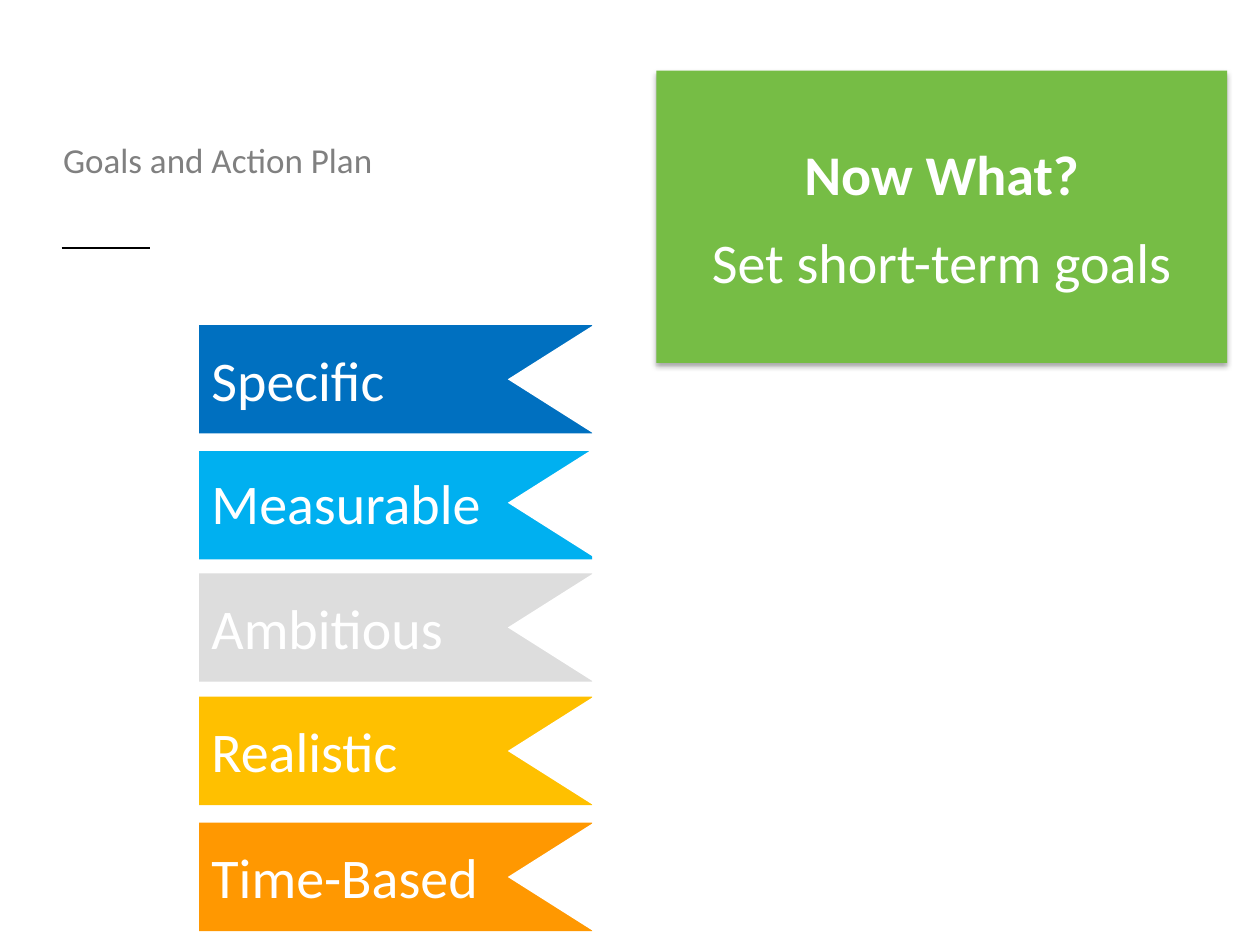
from lxml import etree
from pptx import Presentation
from pptx.dml.color import RGBColor
from pptx.enum.shapes import MSO_CONNECTOR, MSO_SHAPE
from pptx.enum.text import MSO_ANCHOR, PP_ALIGN
from pptx.oxml import parse_xml
from pptx.oxml.ns import nsdecls, qn
from pptx.util import Inches, Pt

RECTANGLE = MSO_SHAPE.RECTANGLE
TRIANGLE = MSO_SHAPE.ISOSCELES_TRIANGLE
STRAIGHT = MSO_CONNECTOR.STRAIGHT
TOP, MIDDLE = MSO_ANCHOR.TOP, MSO_ANCHOR.MIDDLE
LEFT, CENTER = PP_ALIGN.LEFT, PP_ALIGN.CENTER

COLORS = {
    "white": "FFFFFF", "black": "000000", "gray": "808080", "green": "76BD45",
    "blue": "0070C0", "sky": "00B0F0", "silver": "DDDDDD",
    "gold": "FFC000", "orange": "FF9801",
}
BAR_LEFT, BAR_WIDTH, BAR_HEIGHT = 1.58, 3.12, 0.86
NOTCH_LEFT, NOTCH_DEPTH = 3.94, 0.68
GOALS = [
    ("Specific", "blue", 2.58, 0.11),
    ("Measurable", "sky", 3.58, 0.09),
    ("Ambitious", "silver", 4.55, 0.11),
    ("Realistic", "gold", 5.53, 0.11),
    ("Time-Based", "orange", 6.53, 0.11),
]


class GoalSlide:
    """Hold the style and the current slide, and draw its elements."""

    font_name = "Calibri"

    def __init__(self, slide):
        self.slide = slide

    def color(self, name):
        return RGBColor.from_string(COLORS[name])

    def style(self, paragraph, size, color, bold=False, align=LEFT):
        paragraph.alignment = align
        font = paragraph.font
        font.name, font.size, font.bold = self.font_name, Pt(size), bold
        font.color.rgb = self.color(color)

    def title(self, text, left, top, width, height):
        title = self.slide.shapes.title
        title.left, title.top = Inches(left), Inches(top)
        title.width, title.height = Inches(width), Inches(height)
        title.text_frame.text = text
        title.text_frame.vertical_anchor = TOP
        self.style(title.text_frame.paragraphs[0], 20, "gray")

    def rule(self, left, right, y):
        rule = self.slide.shapes.add_connector(
            STRAIGHT, Inches(left), Inches(y), Inches(right), Inches(y))
        rule.line.color.rgb = self.color("black")
        rule.line.width = Pt(1.5)
        etree.SubElement(rule._element.spPr, qn("a:effectLst"))

    def block(self, kind, color, left, top, width, height, rotation=0):
        block = self.slide.shapes.add_shape(
            kind, Inches(left), Inches(top), Inches(width), Inches(height))
        block.shadow.inherit = False
        block.fill.solid()
        block.fill.fore_color.rgb = self.color(color)
        block.line.fill.background()
        block.rotation = rotation
        return block

    def callout(self, heading, detail, left, top, width, height):
        callout = self.block(RECTANGLE, "green", left, top, width, height)
        callout._element.spPr.find(qn("a:effectLst")).append(parse_xml(
            f'<a:outerShdw {nsdecls("a")} blurRad="{Pt(3.1)}" dist="{Pt(1.8)}" '
            f'dir="5400000" rotWithShape="0"><a:srgbClr val="{COLORS["black"]}">'
            '<a:alpha val="35000"/></a:srgbClr></a:outerShdw>'))
        frame = callout.text_frame
        frame.word_wrap, frame.vertical_anchor = True, MIDDLE
        frame.text = heading
        self.style(frame.paragraphs[0], 32, "white", True, CENTER)
        paragraph = frame.add_paragraph()
        paragraph.text = detail
        paragraph.space_before = Pt(12)
        self.style(paragraph, 32, "white", align=CENTER)

    def label(self, text, left, top, width, height):
        label = self.slide.shapes.add_textbox(
            Inches(left), Inches(top), Inches(width), Inches(height))
        label.text_frame.word_wrap = True
        label.text_frame.text = text
        self.style(label.text_frame.paragraphs[0], 32, "white")

    def ribbon(self, text, color, top, inset):
        self.block(RECTANGLE, color, BAR_LEFT, top, BAR_WIDTH, BAR_HEIGHT)
        self.block(TRIANGLE, "white", NOTCH_LEFT, top + inset - 0.02,
                   BAR_HEIGHT, NOTCH_DEPTH, rotation=270)
        self.label(text, BAR_LEFT, top + inset, 2.57, 0.64)


def main():
    deck = Presentation()
    deck.slide_width, deck.slide_height = Inches(10), Inches(7.5)
    page = GoalSlide(deck.slides.add_slide(deck.slide_layouts[5]))
    page.rule(0.49, 1.19, 1.97)
    page.title("Goals and Action Plan", 0.4, 1.05, 5.04, 0.74)
    page.callout("Now What?", "Set short-term goals", 5.21, 0.56, 4.53, 2.32)
    for goal in GOALS:
        page.ribbon(*goal)
    deck.save("out.pptx")


if __name__ == "__main__":
    main()
